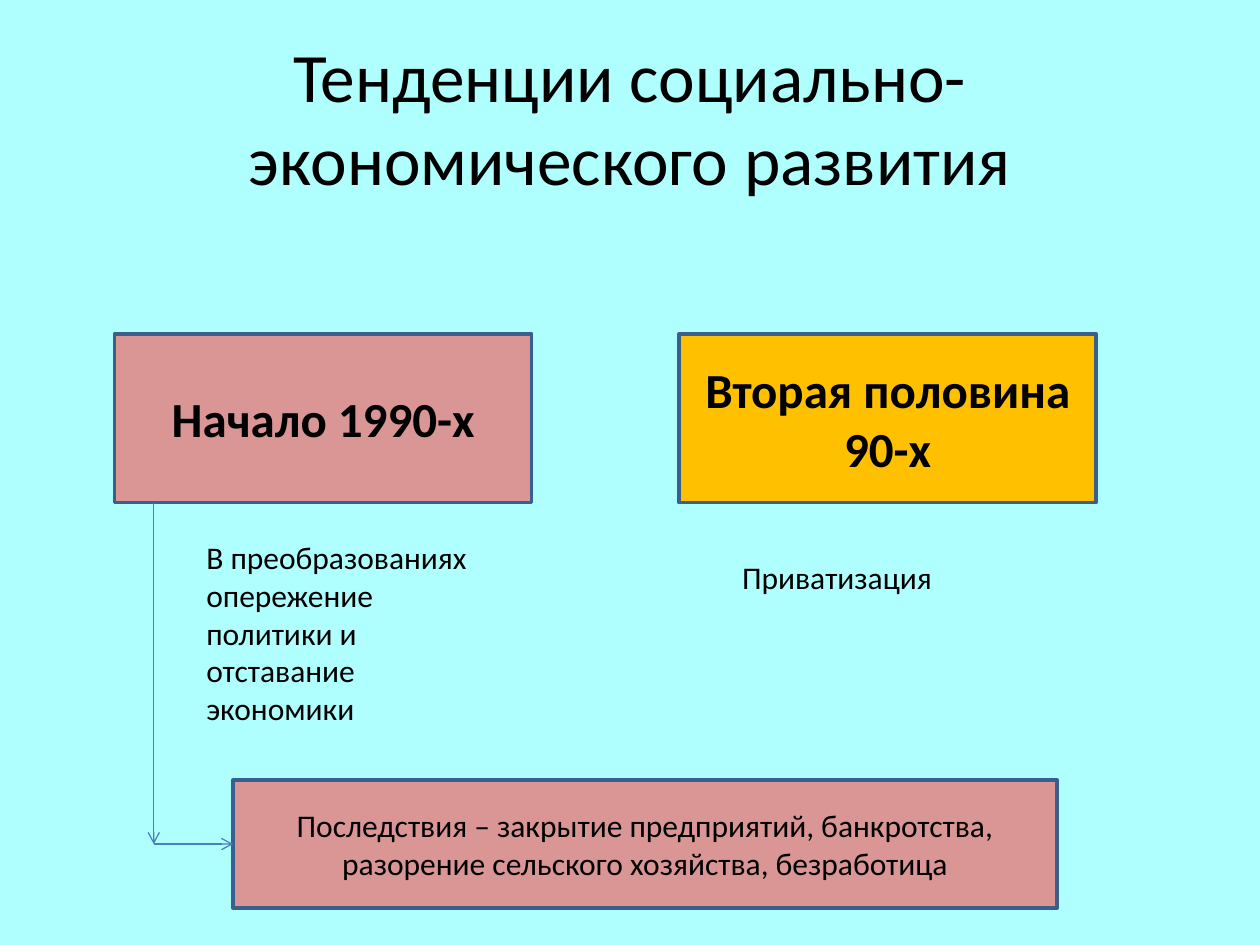
import pptx
import pptx.dml.color
import pptx.enum.shapes
import pptx.enum.text
import pptx.oxml
import pptx.oxml.ns
import pptx.util
from dataclasses import dataclass

Cm, Pt = pptx.util.Cm, pptx.util.Pt
ALIGN = pptx.enum.text.PP_ALIGN
ANCHOR = pptx.enum.text.MSO_ANCHOR


@dataclass(frozen=True)
class Theme:
    font: str = "Calibri"
    background: str = "AFFFFF"
    text: str = "000000"
    rose: str = "D99694"
    amber: str = "FFC000"
    border: str = "3A5F8C"
    arrow: str = "4B7EBC"
    title_size: float = 39.6
    heading_size: float = 28
    body_size: float = 18
    border_width: float = 2
    arrow_width: float = 0.75


THEME = Theme()

# Places are left, top, width, height in centimetres.
TITLE = ("Тенденции социально-экономического развития", (1.27, 0.76, 22.86, 3.18))
PERIODS = [
    ("Начало 1990-х", THEME.rose, 2.31),
    ("Вторая половина 90-х", THEME.amber, 13.69),
]
PERIOD_TOP, PERIOD_WIDTH, PERIOD_HEIGHT = 6.73, 8.41, 3.4
NOTES = [
    ("В преобразованиях опережение политики и отставание экономики",
     (3.91, 10.72, 5.79, 4.11)),
    ("Приватизация", (14.71, 11.13, 6.6, 1.02)),
]
CONSEQUENCES = (
    "Последствия – закрытие предприятий, банкротства, "
    "разорение сельского хозяйства, безработица",
    (4.7, 15.72, 16.61, 2.59),
)
ARROW_X = 3.1


def rgb(value):
    return pptx.dml.color.RGBColor.from_string(value)


def write(shape, text, size=THEME.body_size, bold=False,
          align=ALIGN.CENTER, anchor=ANCHOR.MIDDLE):
    frame = shape.text_frame
    frame.word_wrap = True
    frame.vertical_anchor = anchor
    paragraph = frame.paragraphs[0]
    paragraph.alignment = align
    run = paragraph.add_run()
    run.text = text
    run.font.name = THEME.font
    run.font.size = Pt(size)
    run.font.bold = bold
    run.font.color.rgb = rgb(THEME.text)


def add_text(slide, text, place, **text_format):
    box = slide.shapes.add_textbox(*map(Cm, place))
    write(box, text, **text_format)


def add_box(slide, text, place, fill, **text_format):
    box = slide.shapes.add_shape(
        pptx.enum.shapes.MSO_SHAPE.RECTANGLE, *map(Cm, place))
    box.shadow.inherit = False
    box.fill.solid()
    box.fill.fore_color.rgb = rgb(fill)
    box.line.color.rgb = rgb(THEME.border)
    box.line.width = Pt(THEME.border_width)
    write(box, text, **text_format)
    return box


def add_arrow(slide, start, end):
    arrow = slide.shapes.add_connector(
        pptx.enum.shapes.MSO_CONNECTOR.STRAIGHT, *map(Cm, start + end))
    arrow.line.color.rgb = rgb(THEME.arrow)
    arrow.line.width = Pt(THEME.arrow_width)
    head = pptx.oxml.parse_xml(
        f'<a:tailEnd {pptx.oxml.ns.nsdecls("a")} type="arrow"/>')
    arrow.line._get_or_add_ln().append(head)
    no_shadow = pptx.oxml.parse_xml(
        f'<a:effectLst {pptx.oxml.ns.nsdecls("a")}/>')
    arrow._element.spPr.append(no_shadow)
    return arrow


def main():
    presentation = pptx.Presentation()
    presentation.slide_width = Cm(25.4)
    presentation.slide_height = Cm(19.05)
    slide = presentation.slides.add_slide(presentation.slide_layouts[6])
    slide.background.fill.solid()
    slide.background.fill.fore_color.rgb = rgb(THEME.background)

    title, title_place = TITLE
    add_text(slide, title, title_place, size=THEME.title_size)

    for period, fill, left in PERIODS:
        add_box(slide, period, (left, PERIOD_TOP, PERIOD_WIDTH, PERIOD_HEIGHT),
                fill, size=THEME.heading_size, bold=True)

    for note, place in NOTES:
        add_text(slide, note, place, align=ALIGN.LEFT, anchor=ANCHOR.TOP)

    consequences, place = CONSEQUENCES
    consequences_box = add_box(slide, consequences, place, THEME.rose)

    left, top, _, height = place
    corner = (ARROW_X, top + height / 2)
    add_arrow(slide, (ARROW_X, PERIOD_TOP + PERIOD_HEIGHT), corner)
    across = add_arrow(slide, corner, (left, corner[1]))
    across.end_connect(consequences_box, 1)

    presentation.save("out.pptx")


if __name__ == "__main__":
    main()
